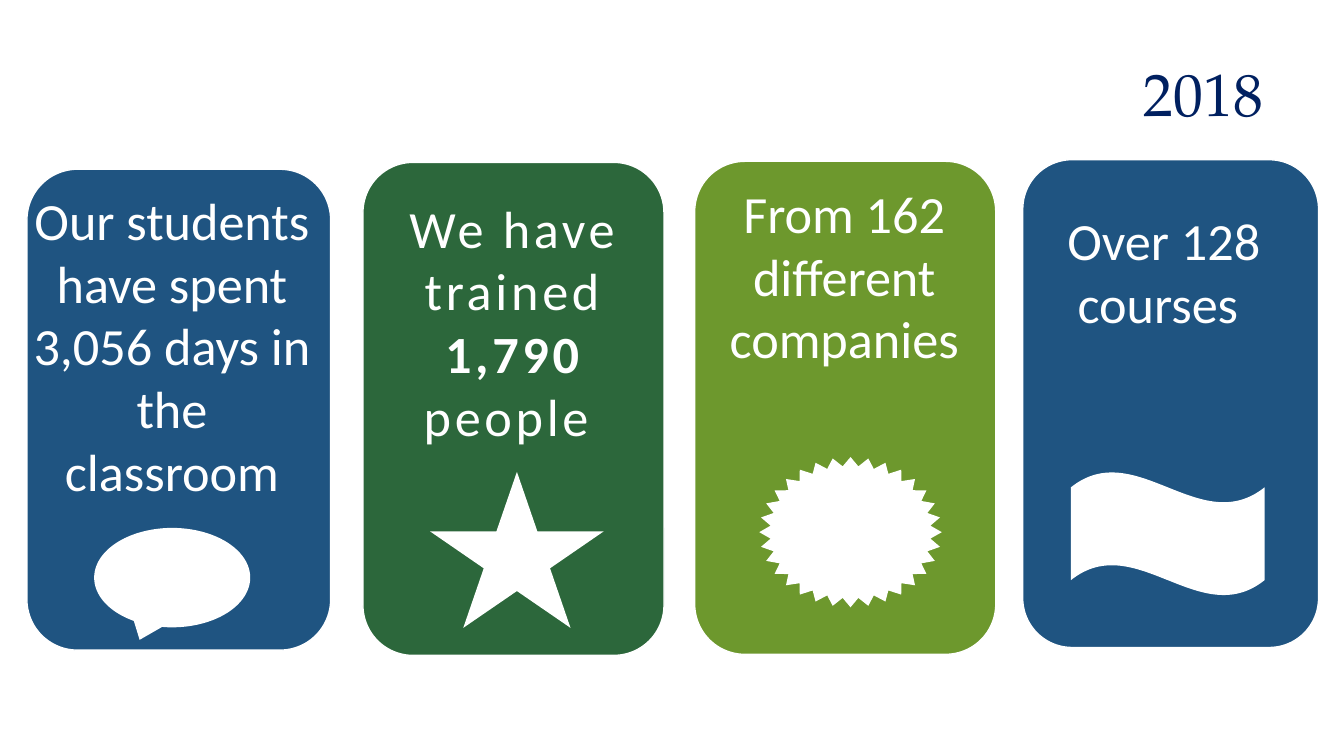
import pptx
import pptx.util
import pptx.dml.color
import pptx.enum.shapes
import pptx.enum.text

Cm, Pt = pptx.util.Cm, pptx.util.Pt
SHAPE = pptx.enum.shapes.MSO_SHAPE
ALIGN = pptx.enum.text.PP_ALIGN
AUTO_SIZE = pptx.enum.text.MSO_AUTO_SIZE
WHITE, NAVY = "FFFFFF", "002060"
BLUE, DARK_GREEN, LIGHT_GREEN = "1F5481", "2C673B", "6D982D"


def color(value):
    return pptx.dml.color.RGBColor.from_string(value)


def add_filled(shapes, kind, box, fill):
    shape = shapes.add_shape(kind, *map(Cm, box))
    shape.shadow.inherit = False
    shape.fill.solid()
    shape.fill.fore_color.rgb = color(fill)
    return shape


deck = pptx.Presentation()
deck.slide_width, deck.slide_height = Cm(25.4), Cm(14.29)
slide = deck.slides.add_slide(deck.slide_layouts[5])

# Year in the title
year = slide.shapes.title
year.left, year.top, year.width, year.height = Cm(1.27), Cm(0.94), Cm(22.86), Cm(1.63)
year.text_frame.text = "2018"
year.text_frame.vertical_anchor = pptx.enum.text.MSO_ANCHOR.MIDDLE
year.text_frame.auto_size = AUTO_SIZE.SHAPE_TO_FIT_TEXT
year_line = year.text_frame.paragraphs[0]
year_line.alignment = ALIGN.RIGHT
year_font = year_line.runs[0].font
year_font.name, year_font.size = "TeX Gyre Pagella", Pt(32)
year_font.color.rgb = color(NAVY)

# Cards: fill, panel box, message box, message parts (text, bold),
# letter spacing in points, icon kind, icon box; boxes in cm
cards = [
    (BLUE, (0.51, 3.2, 5.74, 9.09), (0.38, 3.43, 5.74, 6.25),
     [("Our students have spent 3,056 days in the classroom", False)], 0,
     SHAPE.OVAL_CALLOUT, (1.78, 9.98, 2.95, 1.88)),
    (DARK_GREEN, (6.86, 3.07, 5.69, 9.32), (7.24, 3.58, 4.95, 5.05),
     [("We have trained", False), (" 1,790 ", True), ("people ", False)], 2,
     SHAPE.STAR_5_POINT, (8.13, 8.92, 3.28, 2.95)),
    (LIGHT_GREEN, (13.13, 3.05, 5.69, 9.32), (12.93, 3.3, 6.05, 3.84),
     [("From 162 different companies", False)], 0,
     SHAPE.STAR_32_POINT, (14.35, 8.64, 3.45, 2.84)),
    (BLUE, (19.33, 3.02, 5.59, 9.22), (18.97, 3.81, 6.05, 2.64),
     [("Over 128 courses ", False)], 0,
     SHAPE.WAVE, (20.24, 8.92, 3.66, 2.34)),
]

for fill, panel_box, message_box, parts, spacing, icon_kind, icon_box in cards:
    # The classroom card is held together as a group
    shapes = slide.shapes
    if icon_kind == SHAPE.OVAL_CALLOUT:
        shapes = slide.shapes.add_group_shape().shapes

    panel = add_filled(shapes, SHAPE.ROUNDED_RECTANGLE, panel_box, fill)
    panel.line.color.rgb = color(WHITE)
    panel.line.width = Pt(0.75)

    message = shapes.add_textbox(*map(Cm, message_box)).text_frame
    message.word_wrap = True
    message.auto_size = AUTO_SIZE.SHAPE_TO_FIT_TEXT
    sentence = message.paragraphs[0]
    sentence.alignment = ALIGN.CENTER
    for words, bold in parts:
        run = sentence.add_run()
        run.text = words
        run.font.name, run.font.size, run.font.bold = "Calibri", Pt(28), bold
        run.font.color.rgb = color(WHITE)
        if spacing:
            run._r.get_or_add_rPr().set("spc", str(spacing * 100))

    icon = add_filled(shapes, icon_kind, icon_box, WHITE)
    icon.line.fill.background()
    if icon_kind == SHAPE.STAR_32_POINT:
        icon.adjustments[0] = 0.44

deck.save("out.pptx")
